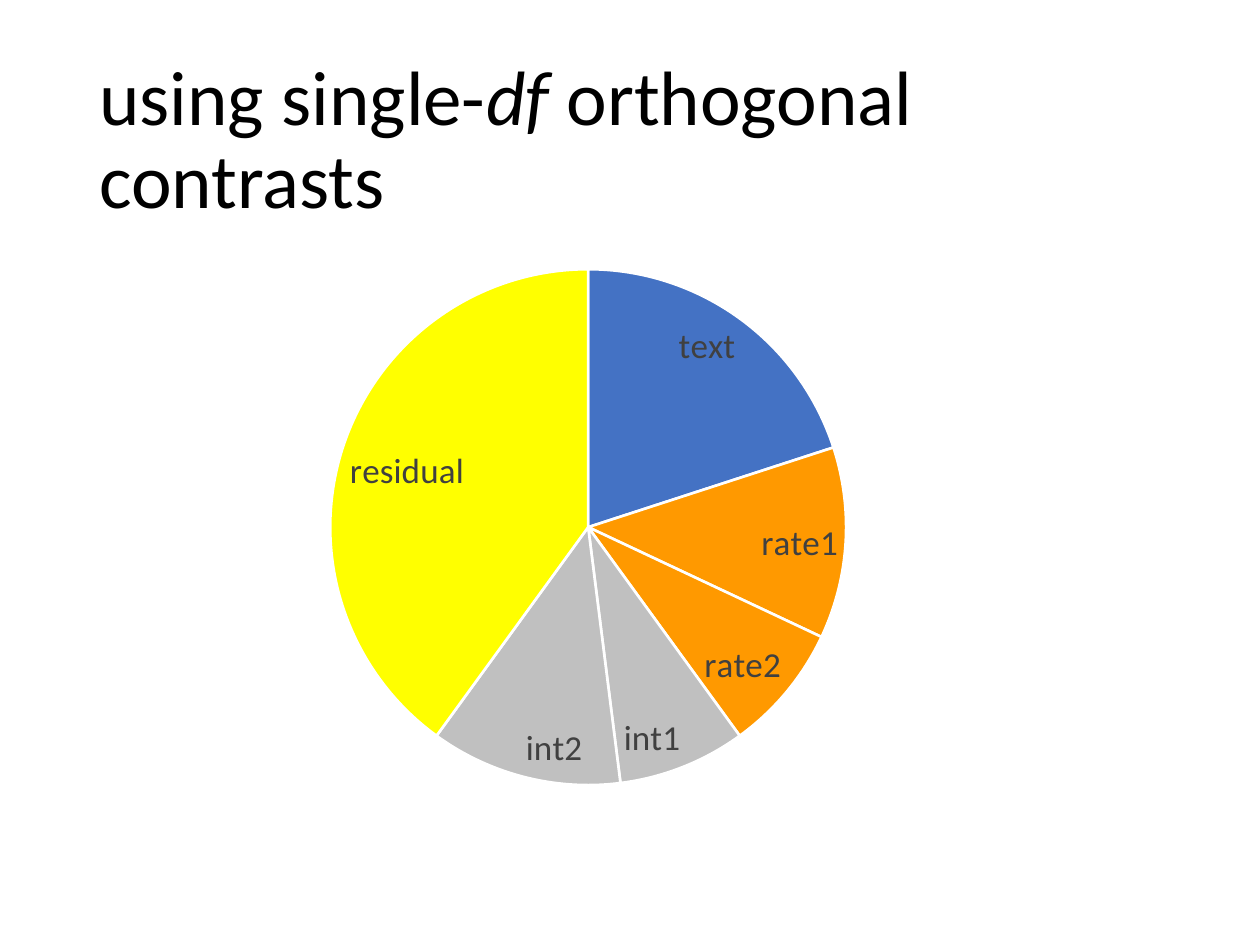
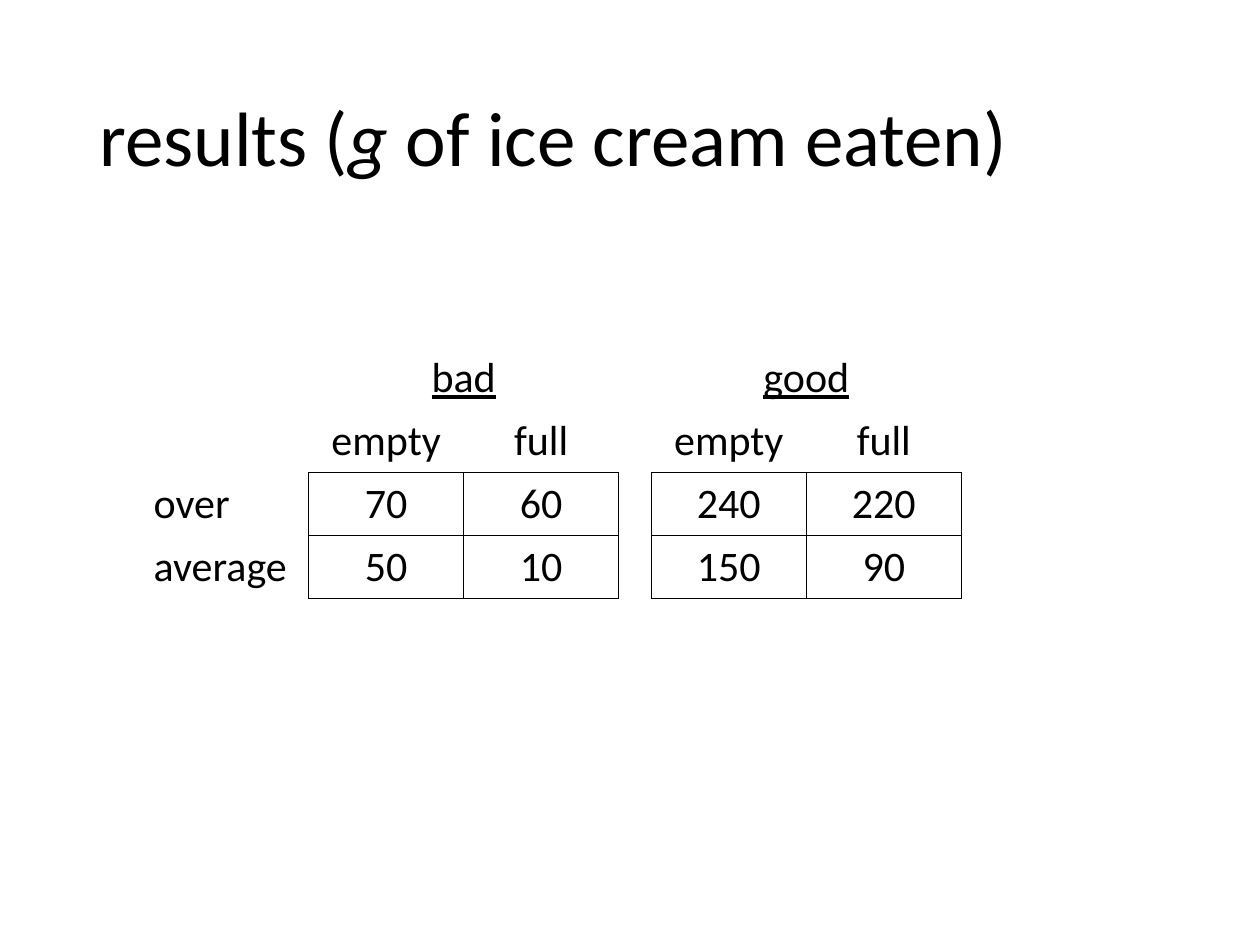
"""Builds two slides: a pie of orthogonal contrasts and a table of results."""
from dataclasses import dataclass

from lxml.etree import SubElement
from pptx import Presentation
from pptx.chart.data import CategoryChartData
from pptx.dml.color import RGBColor
from pptx.enum.chart import XL_CHART_TYPE, XL_LABEL_POSITION
from pptx.enum.text import MSO_ANCHOR, PP_ALIGN
from pptx.oxml import parse_xml
from pptx.oxml.ns import nsdecls, qn
from pptx.slide import Slide
from pptx.table import _Cell
from pptx.util import Inches, Pt

FONT = "Calibri"
BLACK = RGBColor(0x00, 0x00, 0x00)
WHITE = RGBColor(0xFF, 0xFF, 0xFF)
DARK = RGBColor(0x40, 0x40, 0x40)
BLUE = RGBColor(0x44, 0x72, 0xC4)
ORANGE = RGBColor(0xFF, 0x99, 0x00)
GREY = RGBColor(0xC0, 0xC0, 0xC0)
YELLOW = RGBColor(0xFF, 0xFF, 0x00)
LEFT, WIDTH = Inches(0.69), Inches(8.62)


@dataclass
class Slice:
    name: str
    value: int
    color: RGBColor


SLICES = [
    Slice("text", 20, BLUE),
    Slice("rate1", 12, ORANGE),
    Slice("rate2", 8, ORANGE),
    Slice("int1", 8, GREY),
    Slice("int2", 12, GREY),
    Slice("residual", 40, YELLOW),
]
PLOT = {"x": 0.224, "y": 0.028, "w": 0.475, "h": 0.862}

COLS = [1.33, 1.23, 1.23, 0.26, 1.23, 1.23, 1.23]
ROWS = [
    ["", "bad", "", "", "good", "", ""],
    ["", "empty", "full", "", "empty", "full", ""],
    ["over", "70", "60", "", "240", "220", ""],
    ["average", "50", "10", "", "150", "90", ""],
]
SIDES = {"L": (0, -1), "R": (0, 1), "T": (-1, 0), "B": (1, 0)}


def style(font, size: float, color: RGBColor) -> None:
    """Set the shared face with a size and a colour."""
    font.name, font.size = FONT, Pt(size)
    font.color.rgb = color


def add_title(slide: Slide, start: str, term: str, end: str) -> None:
    """Add a title with one term in italics."""
    frame = slide.shapes.add_textbox(LEFT, Inches(0.4), WIDTH, Inches(1.45)).text_frame
    frame.word_wrap = True
    frame.vertical_anchor = MSO_ANCHOR.MIDDLE
    line = frame.paragraphs[0]
    line.line_spacing = 0.9
    style(line.font, 44, BLACK)
    for text in (start, term, end):
        run = line.add_run()
        run.text = text
        run.font.italic = text == term


def add_pie(slide: Slide) -> None:
    """Add the pie with its category labels."""
    data = CategoryChartData()
    data.categories = [part.name for part in SLICES]
    data.add_series("Series 1", [part.value for part in SLICES])
    chart = slide.shapes.add_chart(
        XL_CHART_TYPE.PIE, LEFT, Inches(2), WIDTH, Inches(4.76), data
    ).chart
    chart.has_legend = chart.has_title = False
    style(chart.font, 10, BLACK)
    plot = chart.plots[0]
    plot.vary_by_categories = True
    for spot, part in enumerate(SLICES):
        form = plot.series[0].points[spot].format
        form.fill.solid()
        form.fill.fore_color.rgb = part.color
        form.line.color.rgb = WHITE
        form.line.width = Pt(1.5)
    plot.has_data_labels = True
    labels = plot.data_labels
    labels.show_category_name = True
    labels.show_value = labels.show_percentage = False
    labels.position = XL_LABEL_POSITION.INSIDE_END
    style(labels.font, 20, DARK)
    place_plot(chart)


def place_plot(chart) -> None:
    """Fix the plot area inside the chart frame."""
    area = chart._chartSpace.chart.plotArea
    for old in area.findall(qn("c:layout")):
        area.remove(old)
    layout = parse_xml(f"<c:layout {nsdecls('c')}/>")
    area.insert(0, layout)
    manual = SubElement(layout, qn("c:manualLayout"))
    modes = {"layoutTarget": "inner", "xMode": "edge", "yMode": "edge"}
    for tag, value in {**modes, **PLOT}.items():
        SubElement(manual, qn(f"c:{tag}")).set("val", str(value))


def boxed(row: int, col: int) -> bool:
    """Tell whether a cell holds a framed value."""
    return row in (2, 3) and col in (1, 2, 4, 5)


def set_edges(cell: _Cell, row: int, col: int) -> None:
    """Draw the edges that touch a framed value and clear the rest."""
    props = cell._tc.get_or_add_tcPr()
    for spot, (side, (down, over)) in enumerate(SIDES.items()):
        shown = boxed(row, col) or boxed(row + down, col + over)
        fill = f'<a:solidFill><a:srgbClr val="{BLACK}"/></a:solidFill>' if shown else "<a:noFill/>"
        edge = f'<a:ln{side} {nsdecls("a")} w="{Pt(1)}">{fill}</a:ln{side}>'
        props.insert(spot, parse_xml(edge))


def add_grid(slide: Slide) -> None:
    """Add the table of results."""
    grid = slide.shapes.add_table(
        len(ROWS), len(COLS), Inches(1.12), Inches(2.75), Inches(sum(COLS)), Inches(2)
    ).table
    grid.first_row = grid.horz_banding = False
    for col, width in enumerate(COLS):
        grid.columns[col].width = Inches(width)
    for row, texts in enumerate(ROWS):
        for col, text in enumerate(texts):
            cell = grid.cell(row, col)
            cell.fill.background()
            set_edges(cell, row, col)
            if text:
                cell.text = text
                line = cell.text_frame.paragraphs[0]
                line.alignment = PP_ALIGN.CENTER if col else PP_ALIGN.LEFT
                style(line.font, 24, BLACK)
                line.font.underline = row == 0
    grid.cell(0, 0).merge(grid.cell(1, 0))
    for col in (1, 4):
        grid.cell(0, col).merge(grid.cell(0, col + 1))


def main() -> None:
    """Build and save the deck."""
    deck = Presentation()
    deck.slide_width, deck.slide_height = Inches(10), Inches(7.5)
    blank = deck.slide_layouts[6]
    slide = deck.slides.add_slide(blank)
    add_title(slide, "using single-", "df", " orthogonal contrasts")
    add_pie(slide)
    slide = deck.slides.add_slide(blank)
    add_title(slide, "results (", "g", " of ice cream eaten)")
    add_grid(slide)
    deck.save("out.pptx")


if __name__ == "__main__":
    main()
